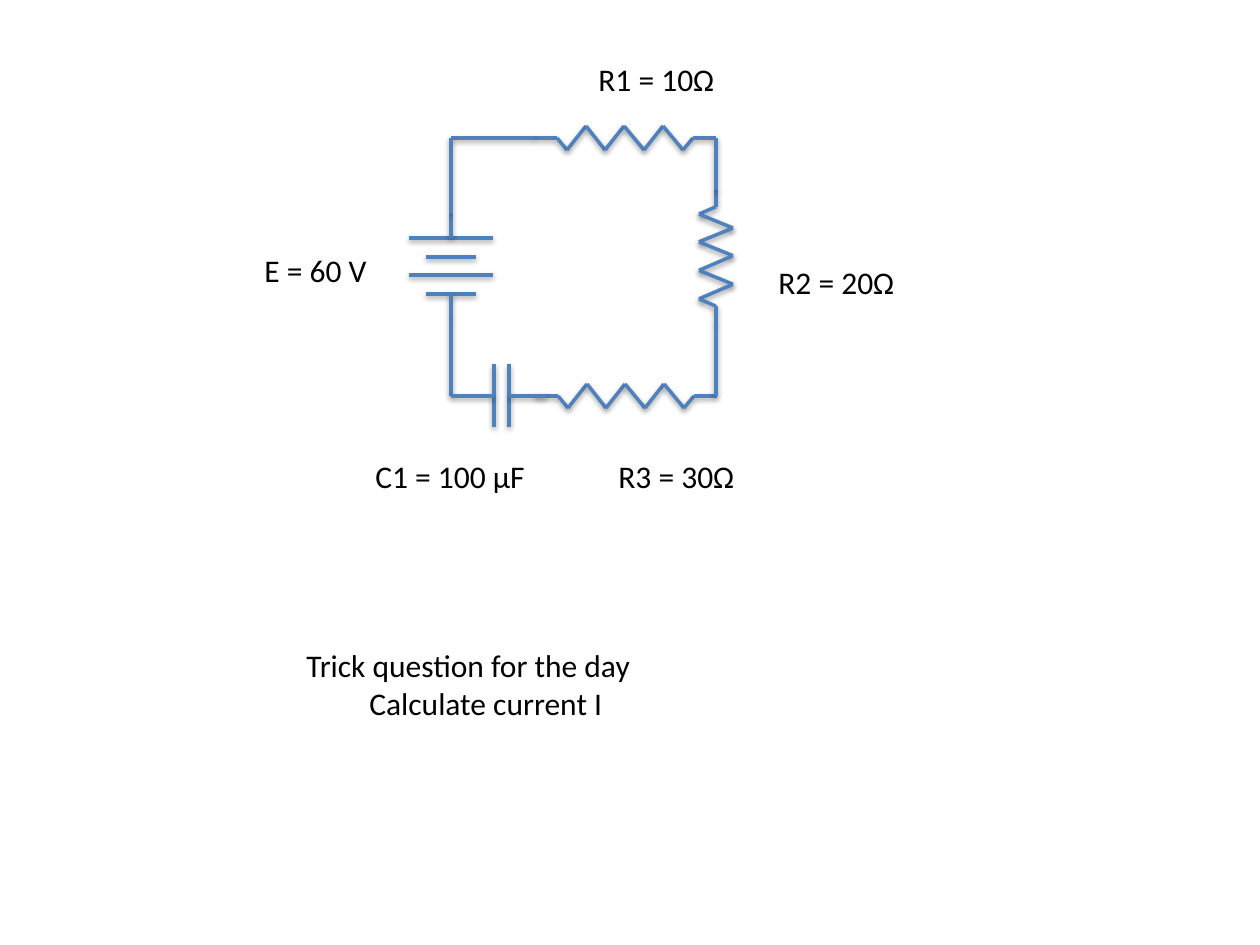
from itertools import pairwise

from pptx import Presentation
from pptx.dml.color import RGBColor
from pptx.enum.shapes import MSO_CONNECTOR
from pptx.enum.text import MSO_AUTO_SIZE
from pptx.util import Pt

STRAIGHT = MSO_CONNECTOR.STRAIGHT
FIT_SHAPE = MSO_AUTO_SIZE.SHAPE_TO_FIT_TEXT
PX = 914400 / 126
COLORS = {"wire": "4F81BD", "text": "000000"}

prs = Presentation()
prs.slide_width = round(1260 * PX)
prs.slide_height = round(945 * PX)
s = prs.slides.add_slide(prs.slide_layouts[6])


def add_path(shapes, *points):
    for start, end in pairwise(points):
        c = shapes.add_connector(STRAIGHT, *[round(v * PX) for v in start + end])
        c.line.color.rgb = RGBColor.from_string(COLORS["wire"])
        c.line.width = Pt(2)


def add_text(text, left, top, width, height=50, size=18, font="Calibri", color="text"):
    box = s.shapes.add_textbox(*[round(v * PX) for v in (left, top, width, height)])
    tf = box.text_frame
    tf.word_wrap = False
    tf.auto_size = FIT_SHAPE
    for i, line in enumerate(text.split("\n")):
        p = tf.paragraphs[0] if i == 0 else tf.add_paragraph()
        r = p.add_run()
        r.text = line
        r.font.size = Pt(size)
        r.font.name = font
        r.font.color.rgb = RGBColor.from_string(COLORS[color])


LEFT, RIGHT, TOP, BOTTOM = 451, 716, 138, 396

battery = s.shapes.add_group_shape().shapes
for y, half in [(294, 25), (275, 42), (257, 25), (238, 42)]:
    add_path(battery, (LEFT - half, y), (LEFT + half, y))
add_path(battery, (LEFT, 294), (LEFT, 319))
add_path(battery, (LEFT, 214), (LEFT, 238))

ZIGZAG = [(0, 0), (23, 0), (33, 1), (52, -1), (71, 1), (90, -1),
          (110, 1), (129, -1), (149, 1), (159, 0), (182, 0)]
for x, y, length, swing, vertical in [
    (RIGHT, 190, 133, -17, True),
    (534, TOP, 182, 12, False),
    (535, BOTTOM, 182, 12, False),
]:
    resistor = s.shapes.add_group_shape().shapes
    steps = [(along * length / 182, side * swing) for along, side in ZIGZAG]
    add_path(resistor, *[(x + b, y + a) if vertical else (x + a, y + b) for a, b in steps])

add_path(s.shapes, (RIGHT, 323), (RIGHT, BOTTOM))
add_path(s.shapes, (RIGHT, TOP), (RIGHT, 190))
add_path(s.shapes, (534, TOP), (LEFT, TOP), (LEFT, 214))
add_path(s.shapes, (LEFT, 319), (LEFT, BOTTOM))

capacitor = s.shapes.add_group_shape().shapes
for plate, lead_end in [(509, 546), (494, LEFT)]:
    add_path(capacitor, (plate, 364), (plate, 427))
    add_path(capacitor, (plate, BOTTOM), (lead_end, BOTTOM))

add_text("R1 = 10Ω", 586, 54, 142)
add_text("R2 = 20Ω", 766, 257, 142)
add_text("R3 = 30Ω", 606, 451, 142)
add_text("C1 = 100 μF", 363, 451, 176)
add_text("E = 60 V", 252, 245, 129)
add_text("Trick question for the day\n\tCalculate current I", 294, 640, 353, height=89)

prs.save("out.pptx")
